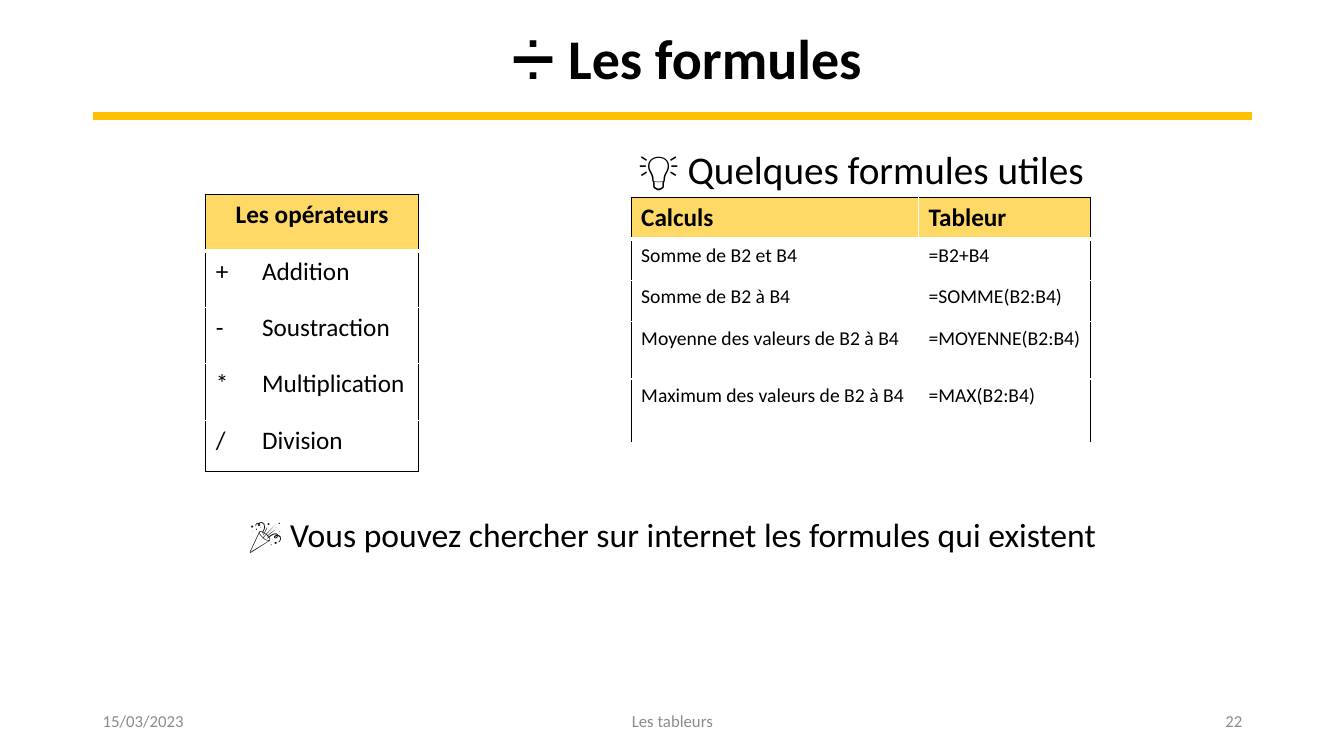
"""Build the slide on spreadsheet formulas, with its operator and formula tables."""
from lxml.etree import SubElement
from pptx import Presentation
from pptx.dml.color import RGBColor
from pptx.enum.shapes import MSO_CONNECTOR
from pptx.enum.text import MSO_ANCHOR, MSO_AUTO_SIZE, PP_ALIGN
from pptx.oxml import parse_xml
from pptx.oxml.ns import nsdecls, qn
from pptx.util import Inches, Pt

BLACK, WHITE, GREY = "000000", "FFFFFF", "8C8C8C"
GOLD, PALE_GOLD = "FFC000", "FFD966"


def color(hex_code):
    return RGBColor.from_string(hex_code)


def write(frame, text, size, hex_code=BLACK, align=PP_ALIGN.LEFT, bold=False):
    frame.text = text
    paragraph = frame.paragraphs[0]
    paragraph.alignment = align
    font = paragraph.runs[0].font
    font.name, font.size, font.bold = "Calibri", Pt(size), bold
    font.color.rgb = color(hex_code)


presentation = Presentation()
presentation.slide_width, presentation.slide_height = Inches(13.33), Inches(7.5)
slide = presentation.slides.add_slide(presentation.slide_layouts[5])

rule = slide.shapes.add_connector(
    MSO_CONNECTOR.STRAIGHT, Inches(0.92), Inches(1.15), Inches(12.42), Inches(1.15))
rule.line.color.rgb = color(GOLD)
rule.line.width = Pt(6)
SubElement(rule._element.spPr, qn("a:effectLst"))

title = slide.shapes.title
title.left, title.top = Inches(1.06), Inches(-0.12)
title.width, title.height = Inches(11.5), Inches(1.45)
title.text_frame.auto_size = MSO_AUTO_SIZE.NONE
title.text_frame.vertical_anchor = MSO_ANCHOR.MIDDLE
write(title.text_frame, "➗ Les formules", 40, align=PP_ALIGN.CENTER, bold=True)
title.text_frame.paragraphs[0].line_spacing = 0.9

captions = [
    ("💡 Quelques formules utiles", 6.07, 1.39, 4.94, 0.57, 28, BLACK, PP_ALIGN.CENTER, MSO_ANCHOR.TOP),
    ("🎉 Vous pouvez chercher sur internet les formules qui existent",
     1.49, 5.05, 10.36, 0.5, 24, BLACK, PP_ALIGN.CENTER, MSO_ANCHOR.TOP),
    ("15/03/2023", 0.92, 6.95, 3, 0.4, 12, GREY, PP_ALIGN.LEFT, MSO_ANCHOR.MIDDLE),
    ("Les tableurs", 4.42, 6.95, 4.5, 0.4, 12, GREY, PP_ALIGN.CENTER, MSO_ANCHOR.MIDDLE),
    ("22", 9.42, 6.95, 3, 0.4, 12, GREY, PP_ALIGN.RIGHT, MSO_ANCHOR.MIDDLE),
]
for text, left, top, width, height, size, ink, align, anchor in captions:
    caption = slide.shapes.add_textbox(Inches(left), Inches(top), Inches(width), Inches(height))
    caption.text_frame.word_wrap = True
    caption.text_frame.vertical_anchor = anchor
    write(caption.text_frame, text, size, ink, align)

operators = [("Les opérateurs", ""), ("+", "Addition"), ("-", "Soustraction"),
             ("*", "Multiplication"), ("/", "Division")]
formulas = [("Calculs", "Tableur"),
            ("Somme de B2 et B4", "=B2+B4"),
            ("Somme de B2 à B4", "=SOMME(B2:B4)"),
            ("Moyenne des valeurs de B2 à B4", "=MOYENNE(B2:B4)"),
            ("Maximum des valeurs de B2 à B4", "=MAX(B2:B4)")]
tables = [
    (operators, 2.04, 1.93, [0.46, 1.65], [0.56] * 4 + [0.51], 18, PP_ALIGN.CENTER, True, BLACK),
    (formulas, 6.26, 1.96, [2.85, 1.71], [0.41] * 3 + [0.57, 0.63], 14, PP_ALIGN.LEFT, False, WHITE),
]
for entries, left, top, widths, heights, body_size, head_align, merged_head, bottom_ink in tables:
    table = slide.shapes.add_table(
        len(entries), len(widths), Inches(left), Inches(top),
        Inches(sum(widths)), Inches(sum(heights))).table
    table.horz_banding = False
    for column, width in zip(table.columns, widths):
        column.width = Inches(width)
    for row, height in zip(table.rows, heights):
        row.height = Inches(height)
    if merged_head:
        table.cell(0, 0).merge(table.cell(0, 1))
    for r, entry in enumerate(entries):
        is_head, is_last = r == 0, r == len(entries) - 1
        for c, text in enumerate(entry):
            cell = table.cell(r, c)
            if text:
                write(cell.text_frame, text, 18 if is_head else body_size,
                      align=head_align if is_head else PP_ALIGN.LEFT, bold=is_head)
            cell.fill.solid()
            cell.fill.fore_color.rgb = color(PALE_GOLD if is_head else WHITE)
            spans_row = is_head and merged_head
            borders = [
                ("lnL", BLACK if c == 0 else WHITE, 1),
                ("lnR", BLACK if c == 1 or spans_row else WHITE, 1),
                ("lnT", BLACK if is_head else WHITE, 1),
                ("lnB", bottom_ink if is_last else WHITE, 3 if is_head else 1),
            ]
            properties = cell._tc.get_or_add_tcPr()
            for position, (side, ink, weight) in enumerate(borders):
                properties.insert(position, parse_xml(
                    f'<a:{side} {nsdecls("a")} w="{Pt(weight)}"><a:solidFill>'
                    f'<a:srgbClr val="{ink}"/></a:solidFill></a:{side}>'))

presentation.save("out.pptx")
